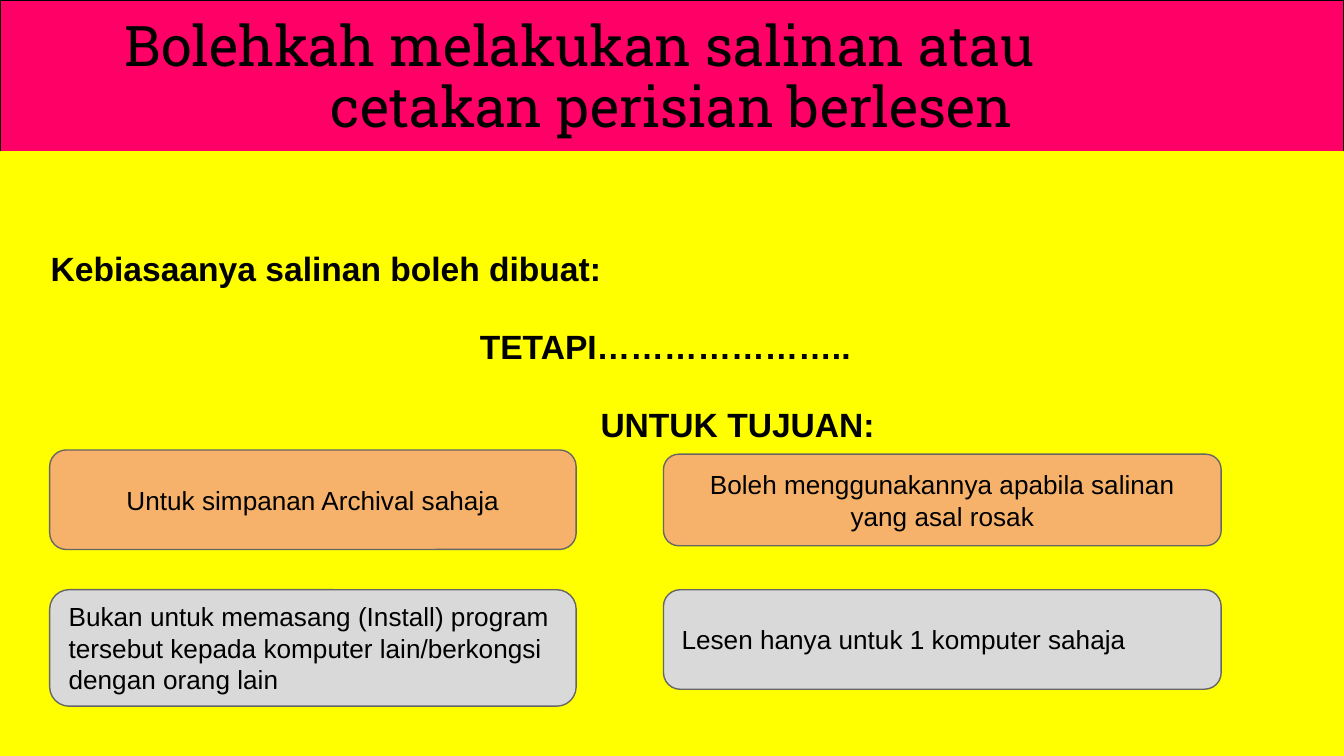
from pptx import Presentation, util as u
from pptx.dml.color import RGBColor
from pptx.enum import shapes, text

Cm, Pt = u.Cm, u.Pt
LEFT, MID = text.PP_ALIGN.LEFT, text.PP_ALIGN.CENTER
WIDE, HIGH, HEAD = 25.4, 14.28, 2.87
PEACH, GREY = "F6B26B", "D9D9D9"


def color(code):
    return RGBColor.from_string(code)


def style(shape, box, fill, line):
    """Place a shape and set its fill and outline."""
    shape.left, shape.top, shape.width, shape.height = map(Cm, box)
    shape.fill.solid()
    shape.fill.fore_color.rgb = color(fill)
    shape.line.color.rgb = color(line)
    shape.line.width = Pt(0.75)
    shape.shadow.inherit = False


def write(shape, rows, font, para=None, **frame):
    """Write rows of (words, alignment, indent in cm)."""
    tf = shape.text_frame
    form = dict(word_wrap=True, auto_size=text.MSO_AUTO_SIZE.NONE,
                margin_left=Cm(0.25), margin_right=Cm(0.25),
                margin_top=Cm(0.25), margin_bottom=Cm(0.25))
    for key, val in (form | frame).items():
        setattr(tf, key, val)
    for i, (words, align, dent) in enumerate(rows):
        p = tf.paragraphs[0] if i == 0 else tf.add_paragraph()
        p.alignment = align
        for key, val in (para or {}).items():
            setattr(p, key, val)
        props = p._p.get_or_add_pPr()
        props.set("marL", str(Cm(dent)))
        props.set("indent", "0")
        run = p.add_run()
        run.text = words
        run.font.color.rgb = color("000000")
        for key, val in font.items():
            setattr(run.font, key, val)


def add_title(slide):
    title = slide.shapes.title
    style(title, (0, 0, WIDE, HEAD), "FF0066", "000000")
    write(title, [("Bolehkah melakukan salinan atau", LEFT, 2.11),
                  ("cetakan perisian berlesen", MID, 0)],
          dict(name="Roboto Slab", size=Pt(30), bold=False),
          dict(line_spacing=0.9, space_before=Pt(0)),
          vertical_anchor=text.MSO_ANCHOR.TOP, margin_top=Cm(0.35))


def add_body(slide):
    body = slide.shapes.add_shape(shapes.MSO_SHAPE.RECTANGLE, 0, 0, 0, 0)
    style(body, (0, HEAD, WIDE, HIGH - HEAD), "FFFF00", "FFFF00")
    write(body, [("Kebiasaanya salinan boleh dibuat:", LEFT, 0.71),
                 ("TETAPI…………………..", LEFT, 8.82),
                 ("UNTUK TUJUAN:", LEFT, 11.1)],
          dict(name="Arial", size=Pt(18), bold=True),
          dict(line_spacing=1.15, space_after=Pt(17)),
          vertical_anchor=text.MSO_ANCHOR.TOP, margin_top=Cm(1.7))


def add_card(slide, box, fill, words, align):
    kind = shapes.MSO_SHAPE.ROUNDED_RECTANGLE
    card = slide.shapes.add_shape(kind, 0, 0, 0, 0)
    style(card, box, fill, "666666")
    write(card, [(words, align, 0)], dict(name="Arial", size=Pt(14)),
          vertical_anchor=text.MSO_ANCHOR.MIDDLE)


def main():
    prs = Presentation()
    prs.slide_width, prs.slide_height = Cm(WIDE), Cm(HIGH)
    slide = prs.slides.add_slide(prs.slide_layouts[5])

    # Heading and yellow panel
    add_title(slide)
    add_body(slide)

    # Two columns of cards: (left, width), then (top, height) of each
    one, two = (0.94, 9.95), (12.54, 10.54)
    cards = [
        (one, (8.5, 1.88), PEACH, "Untuk simpanan Archival sahaja", MID),
        (two, (8.58, 1.73), PEACH,
         "Boleh menggunakannya apabila salinan yang asal rosak", MID),
        (one, (11.14, 2.2), GREY,
         "Bukan untuk memasang (Install) program tersebut kepada "
         "komputer lain/berkongsi dengan orang lain", LEFT),
        (two, (11.14, 1.88), GREY,
         "Lesen hanya untuk 1 komputer sahaja", LEFT),
    ]
    for (left, width), (top, height), fill, words, align in cards:
        add_card(slide, (left, top, width, height), fill, words, align)

    prs.save("out.pptx")


if __name__ == "__main__":
    main()
